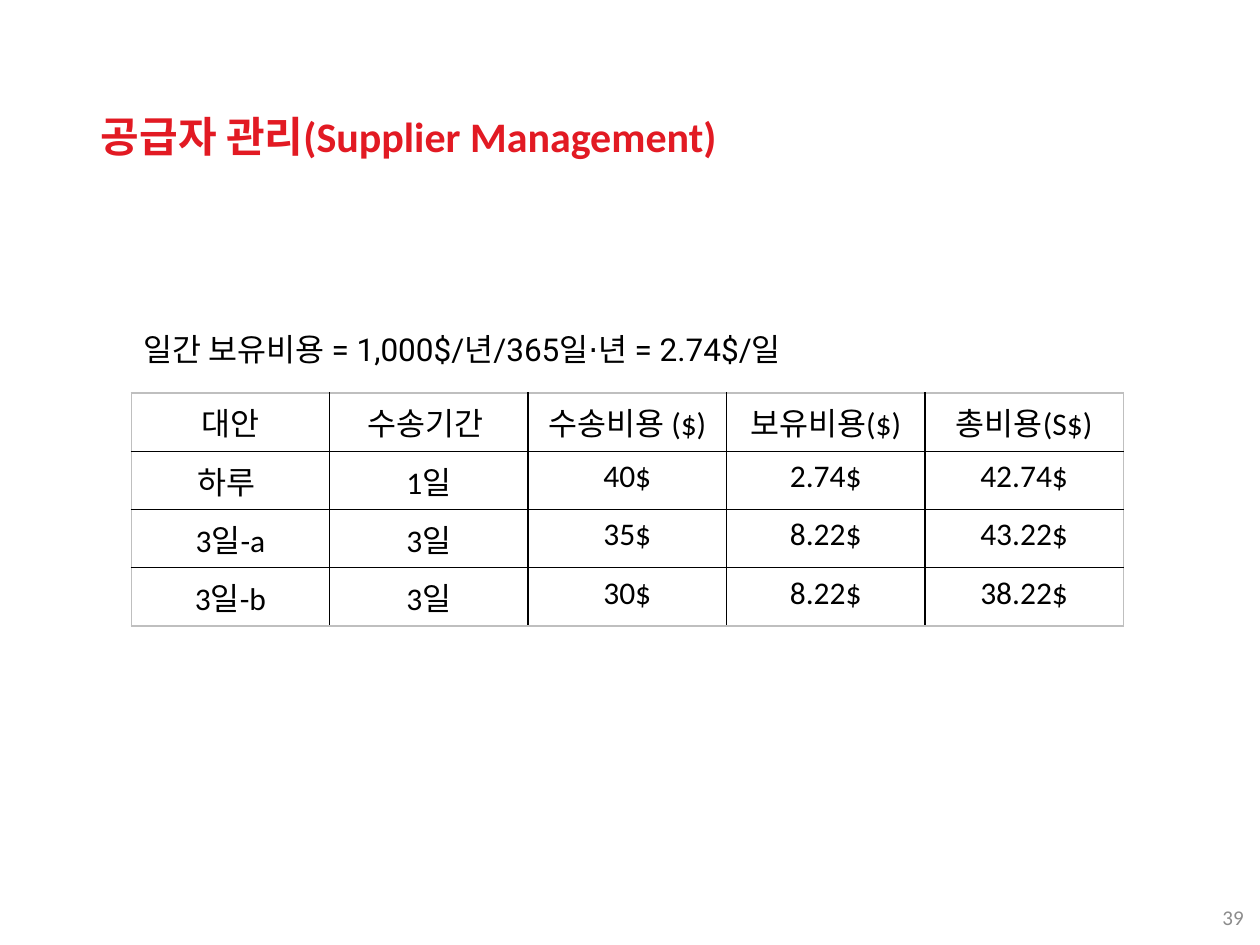
"""Build the supplier management slide comparing transport alternatives by total cost."""
from lxml import etree
from pptx import Presentation
from pptx.dml.color import RGBColor
from pptx.enum import text
from pptx.oxml.ns import qn
from pptx.util import Pt

TITLE = "공급자 관리(Supplier Management)"
DAILY_COST = "일간 보유비용 = 1,000$/년/365일⋅년 = 2.74$/일"
PAGE_NUMBER = "39"
ALTERNATIVES = [
    ("대안", "수송기간 ", "수송비용 ($)", "보유비용($)", "총비용(S$)"),
    ("하루 ", "1일", "40$", "2.74$", "42.74$"),
    ("3일-a", "3일", "35$", "8.22$", "43.22$"),
    ("3일-b", "3일", "30$", "8.22$", "38.22$"),
]
COLORS = {"title": "E21A23", "body": "000000", "page": "8C8C8C",
          "cell": "FFFFFF", "inner": "000000", "outer": "BFBFBF"}
TABLE_LEFT, TABLE_TOP, COLUMN_WIDTH, ROW_HEIGHT = 75, 224.6, 113.4, 33.3


def style(paragraph, size, font, color, align=text.PP_ALIGN.LEFT, bold=False):
    paragraph.alignment = align
    paragraph.font.size = Pt(size)
    paragraph.font.name = font
    paragraph.font.bold = bold
    paragraph.font.color.rgb = RGBColor.from_string(COLORS[color])


def add_label(slide, words, box, anchor, *look, **options):
    frame = slide.shapes.add_textbox(*map(Pt, box)).text_frame
    frame.word_wrap = True
    frame.vertical_anchor = anchor
    frame.text = words
    style(frame.paragraphs[0], *look, **options)
    return frame


def add_borders(cell, outer_sides):
    properties = cell._tc.get_or_add_tcPr()
    for position, (side, is_outer) in enumerate(outer_sides.items()):
        line = etree.Element(qn(f"a:ln{side}"), w=str(Pt(1)))
        fill = etree.SubElement(line, qn("a:solidFill"))
        color = COLORS["outer" if is_outer else "inner"]
        etree.SubElement(fill, qn("a:srgbClr"), val=color)
        properties.insert(position, line)


def add_cost_table(slide):
    row_count, column_count = len(ALTERNATIVES), len(ALTERNATIVES[0])
    costs = slide.shapes.add_table(
        row_count, column_count, Pt(TABLE_LEFT), Pt(TABLE_TOP),
        Pt(COLUMN_WIDTH * column_count), Pt(ROW_HEIGHT * row_count)).table
    costs.first_row = costs.horz_banding = False
    for column in costs.columns:
        column.width = Pt(COLUMN_WIDTH)
    for r, alternative in enumerate(ALTERNATIVES):
        costs.rows[r].height = Pt(ROW_HEIGHT)
        for c, value in enumerate(alternative):
            cell = costs.cell(r, c)
            cell.text = value
            style(cell.text_frame.paragraphs[0], 18, "Calibri", "body",
                  text.PP_ALIGN.CENTER)
            cell.fill.solid()
            cell.fill.fore_color.rgb = RGBColor.from_string(COLORS["cell"])
            add_borders(cell, {"L": c == 0, "R": c == column_count - 1,
                               "T": r == 0, "B": r == row_count - 1})


def main():
    deck = Presentation()
    deck.slide_width, deck.slide_height = Pt(720), Pt(540)
    slide = deck.slides.add_slide(deck.slide_layouts[6])

    add_label(slide, PAGE_NUMBER, (529.2, 509.8, 188.6, 28.8),
              text.MSO_ANCHOR.MIDDLE, 12, "Calibri", "page",
              align=text.PP_ALIGN.RIGHT)
    title = add_label(slide, TITLE, (57.6, 17.3, 573.1, 77.8),
                      text.MSO_ANCHOR.BOTTOM, 24, "Calibri", "title", bold=True)
    title.margin_left = title.margin_right = title.margin_top = 0
    title.margin_bottom = Pt(3)
    add_cost_table(slide)
    daily_cost = add_label(slide, DAILY_COST, (TABLE_LEFT, 185, 420.5, 28.8),
                           text.MSO_ANCHOR.TOP, 18, "Roboto", "body")
    daily_cost.word_wrap = False
    daily_cost.auto_size = text.MSO_AUTO_SIZE.SHAPE_TO_FIT_TEXT

    deck.save("out.pptx")


if __name__ == "__main__":
    main()
